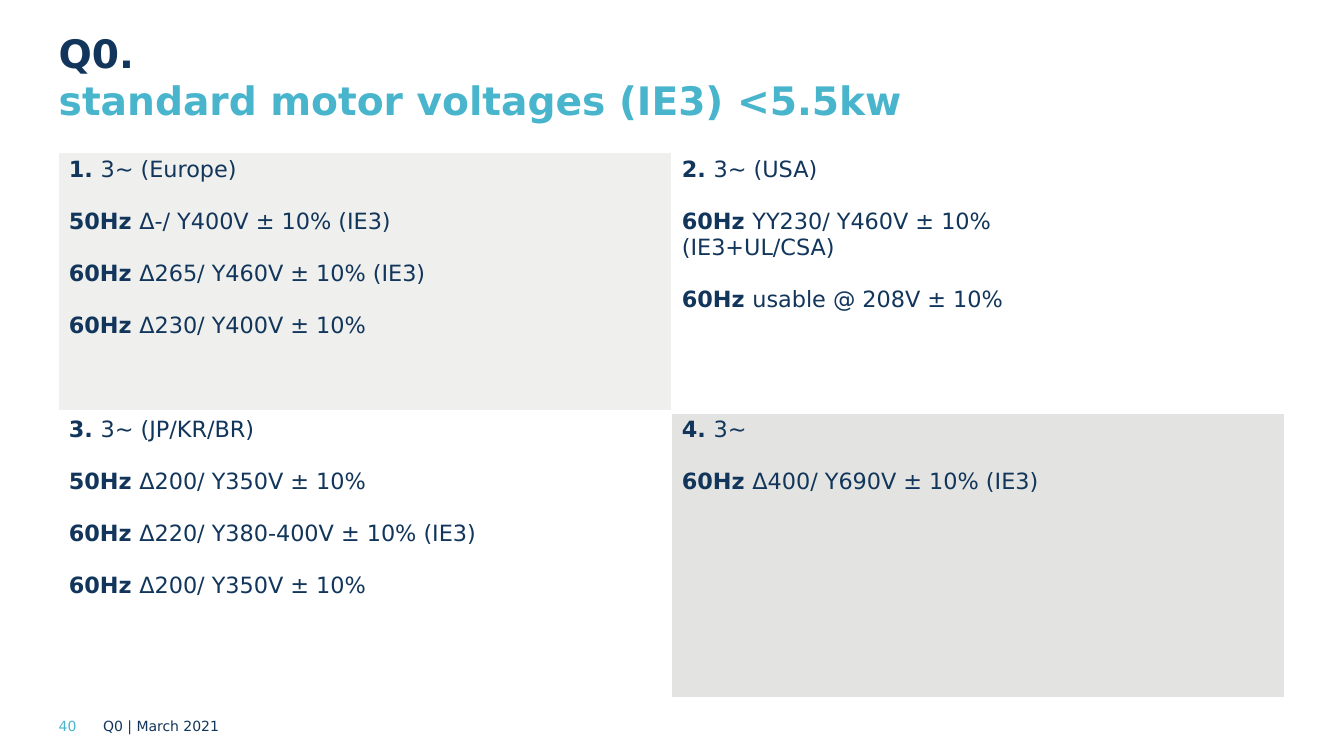
from dataclasses import dataclass
from lxml.etree import SubElement
from pptx import Presentation
from pptx.dml.color import RGBColor
from pptx.enum.text import MSO_ANCHOR, MSO_AUTO_SIZE, PP_ALIGN
from pptx.oxml.ns import qn
from pptx.util import Cm, Pt


@dataclass(frozen=True)
class Theme:
    font: str = "DejaVu Sans"
    navy: str = "12365B"
    aqua: str = "48B5CD"
    white: str = "FFFFFF"
    heading_size: float = 28
    table_size: float = 16
    footer_size: float = 10
    entry_gap: float = 18.6


THEME = Theme()
HEADING = "Q0."
SUBHEADING = "standard motor voltages (IE3) <5.5kw"
PAGE_NUMBER = "40"
FOOTER = "Q0 | March 2021"

REGIONS = [
    [
        ("EFEFED", [
            ("1.", "3~ (Europe)"),
            ("50Hz", "Δ-/ Y400V ± 10% (IE3)"),
            ("60Hz", "Δ265/ Y460V ± 10% (IE3)"),
            ("60Hz", "Δ230/ Y400V ± 10%"),
        ]),
        (None, [
            ("2.", "3~ (USA)"),
            ("60Hz", "YY230/ Y460V ± 10%\n(IE3+UL/CSA)"),
            ("60Hz", "usable @ 208V ± 10%"),
        ]),
    ],
    [
        (None, [
            ("3.", "3~ (JP/KR/BR)"),
            ("50Hz", "Δ200/ Y350V ± 10%"),
            ("60Hz", "Δ220/ Y380-400V ± 10% (IE3)"),
            ("60Hz", "Δ200/ Y350V ± 10%"),
        ]),
        ("E3E4E1", [
            ("4.", "3~"),
            ("60Hz", "Δ400/ Y690V ± 10% (IE3)"),
        ]),
    ],
]

LEFT, WIDTH = 1.48, 30.9
HEADING_TOP, HEADING_HEIGHT = 0.74, 1.19
TABLE_TOP = 3.83
ROW_HEIGHTS = [6.55, 7.19]
BORDER_WIDTHS = [
    {"lnL": 1, "lnR": 1, "lnT": 1, "lnB": 3},
    {"lnL": 1, "lnR": 1, "lnT": 3, "lnB": 1},
]


def write(paragraph, text, *, size, color=THEME.navy, bold=False):
    for index, line in enumerate(text.split("\n")):
        if index:
            paragraph.add_line_break()
        run = paragraph.add_run()
        run.text = line
        run.font.name = THEME.font
        run.font.size = Pt(size)
        run.font.bold = bold
        run.font.color.rgb = RGBColor.from_string(color)


def place(box, left, top, width, height, anchor):
    box.left, box.top, box.width, box.height = map(Cm, (left, top, width, height))
    frame = box.text_frame
    frame.margin_left = frame.margin_right = 0
    frame.margin_top = frame.margin_bottom = 0
    frame.word_wrap = True
    frame.auto_size = MSO_AUTO_SIZE.NONE
    frame.vertical_anchor = anchor
    paragraph = frame.paragraphs[0]
    paragraph.alignment = PP_ALIGN.LEFT
    paragraph.space_before = Pt(0)
    return paragraph


def add_borders(cell, widths):
    properties = cell._tc.get_or_add_tcPr()
    for side, points in widths.items():
        border = SubElement(properties, qn(f"a:{side}"), w=str(Pt(points)))
        fill = SubElement(border, qn("a:solidFill"))
        SubElement(fill, qn("a:srgbClr"), val=THEME.white)


def add_headings(slide):
    title = place(slide.shapes.title, LEFT, HEADING_TOP, WIDTH, HEADING_HEIGHT, MSO_ANCHOR.TOP)
    write(title, HEADING, size=THEME.heading_size, bold=True)
    subtitle = place(
        slide.placeholders[1], LEFT, HEADING_TOP + HEADING_HEIGHT,
        WIDTH, HEADING_HEIGHT, MSO_ANCHOR.TOP,
    )
    properties = subtitle._p.get_or_add_pPr()
    properties.set("marL", "0")
    properties.set("indent", "0")
    SubElement(properties, qn("a:buNone"))
    write(subtitle, SUBHEADING, size=THEME.heading_size, color=THEME.aqua, bold=True)


def add_voltages(slide):
    rows, columns = len(REGIONS), len(REGIONS[0])
    voltages = slide.shapes.add_table(
        rows, columns, Cm(LEFT), Cm(TABLE_TOP), Cm(WIDTH), Cm(sum(ROW_HEIGHTS))
    ).table
    voltages.first_row = voltages.horz_banding = False
    for row_index, regions in enumerate(REGIONS):
        voltages.rows[row_index].height = Cm(ROW_HEIGHTS[row_index])
        for column_index, (background, entries) in enumerate(regions):
            cell = voltages.cell(row_index, column_index)
            add_borders(cell, BORDER_WIDTHS[row_index])
            if background:
                cell.fill.solid()
                cell.fill.fore_color.rgb = RGBColor.from_string(background)
            else:
                cell.fill.background()
            for index, (label, value) in enumerate(entries):
                frame = cell.text_frame
                entry = frame.add_paragraph() if index else frame.paragraphs[0]
                entry.space_before = Pt(THEME.entry_gap if index else 0)
                write(entry, f"{label} ", size=THEME.table_size, bold=True)
                write(entry, value, size=THEME.table_size)


def add_footer(slide):
    for text, left, width, color in (
        (PAGE_NUMBER, LEFT, 0.91, THEME.aqua),
        (FOOTER, 2.6, 24.49, THEME.navy),
    ):
        box = slide.shapes.add_textbox(0, 0, 0, 0)
        line = place(box, left, 18.08, width, 0.43, MSO_ANCHOR.MIDDLE)
        write(line, text, size=THEME.footer_size, color=color)


def main():
    deck = Presentation()
    deck.slide_width, deck.slide_height = Cm(33.87), Cm(19.05)
    slide = deck.slides.add_slide(deck.slide_layouts[1])
    add_headings(slide)
    add_voltages(slide)
    add_footer(slide)
    deck.save("out.pptx")


if __name__ == "__main__":
    main()
